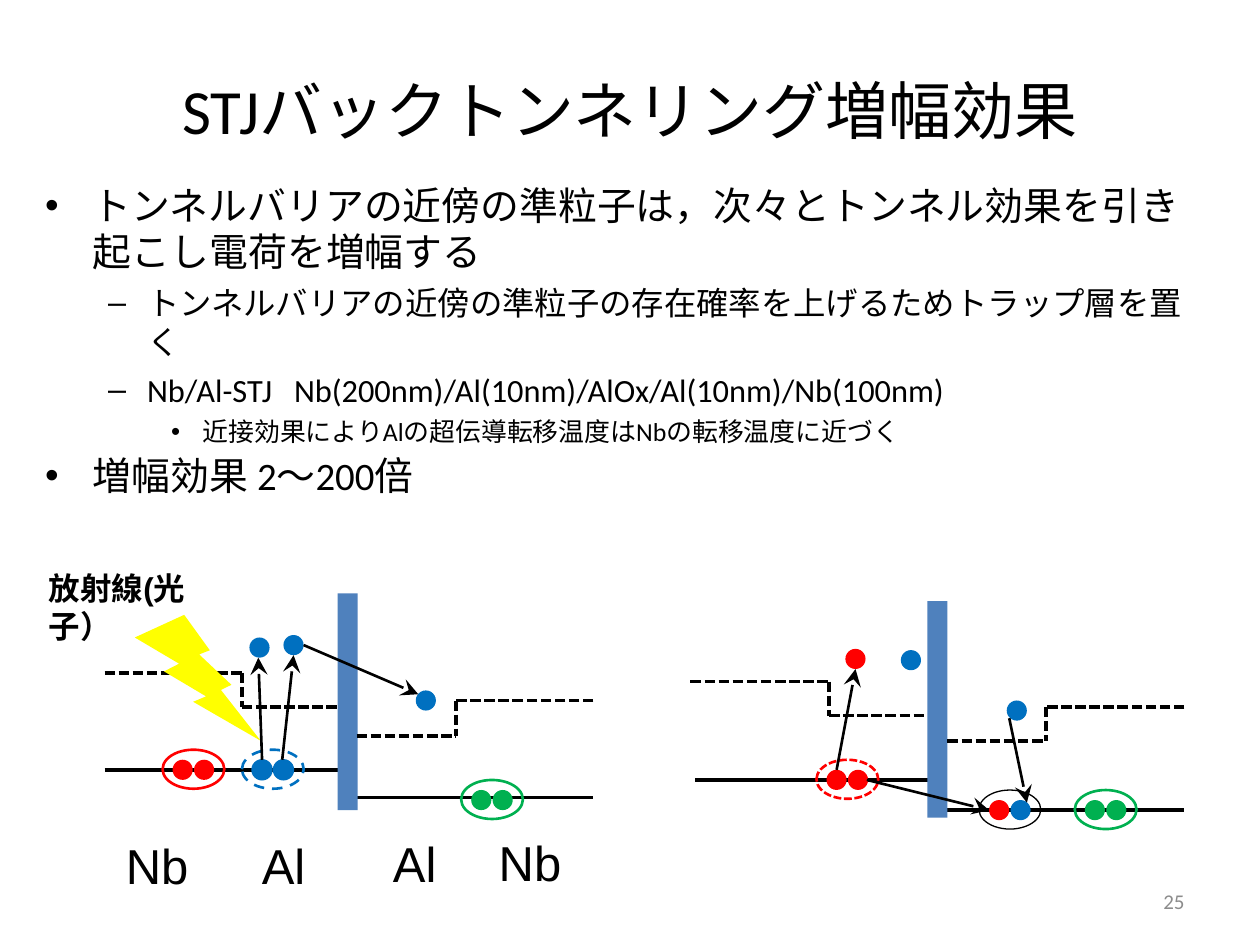
from lxml.etree import SubElement
from pptx import Presentation
from pptx.dml.color import RGBColor
from pptx.enum.dml import MSO_LINE_DASH_STYLE as Dash
from pptx.enum.shapes import MSO_CONNECTOR as Connector, MSO_SHAPE as Shape
from pptx.enum.text import MSO_ANCHOR as Anchor, PP_ALIGN as Align
from pptx.oxml.ns import qn
from pptx.util import Pt

PX = 9144  # 100 px to the inch
COLORS = {
    name: RGBColor.from_string(value)
    for name, value in {
        "black": "000000", "grey": "8C8C8C", "barrier": "4F81BD", "blue": "0070C0",
        "red": "FF0000", "green": "00B050", "yellow": "FFFF00",
    }.items()
}


def add_figure(shapes, kind, frame, fill=None, line=None, width=0.75, dash=None):
    """Add a preset shape; without a fill or line colour that part stays empty."""
    figure = shapes.add_shape(kind, *(value * PX for value in frame))
    figure.shadow.inherit = False
    if fill:
        figure.fill.solid()
        figure.fill.fore_color.rgb = COLORS[fill]
    else:
        figure.fill.background()
    if line:
        figure.line.color.rgb = COLORS[line]
        figure.line.width = Pt(width)
        if dash:
            figure.line.dash_style = dash
    else:
        figure.line.fill.background()


def add_line(shapes, start, end, width, dash=None, arrow=False):
    line = shapes.add_connector(Connector.STRAIGHT, *(value * PX for value in start + end))
    line.line.color.rgb = COLORS["black"]
    line.line.width = Pt(width)
    if dash:
        line.line.dash_style = dash
    if arrow:
        outline = line._element.spPr.find(qn("a:ln"))
        SubElement(outline, qn("a:tailEnd"), type="stealth", w="lg", len="lg")
    SubElement(line._element.spPr, qn("a:effectLst"))


deck = Presentation()
deck.slide_width, deck.slide_height = 1000 * PX, 750 * PX
page = deck.slides.add_slide(deck.slide_layouts[5])

# Title
title = page.shapes.title
title.left, title.top, title.width, title.height = (n * PX for n in (50, 50, 900, 73))
title.text_frame.vertical_anchor = Anchor.MIDDLE
para = title.text_frame.paragraphs[0]
para.alignment = Align.CENTER
span = para.add_run()
span.text = "STJバックトンネリング増幅効果"
span.font.size = Pt(36)
span.font.name = "Calibri"
span.font.color.rgb = COLORS["black"]

# Bullet levels: margin, hanging indent, mark, text size, space before
LEVELS = [(38, 38, "•", 22.2, 3), (81, 31, "–", 18.5, 5), (125, 25, "•", 14.8, 4)]
BULLETS = [
    (0, "トンネルバリアの近傍の準粒子は，次々とトンネル効果を引き起こし電荷を増幅する"),
    (1, "トンネルバリアの近傍の準粒子の存在確率を上げるためトラップ層を置く"),
    (1, "Nb/Al-STJ   Nb(200nm)/Al(10nm)/AlOx/Al(10nm)/Nb(100nm)"),
    (2, "近接効果によりAlの超伝導転移温度はNbの転移温度に近づく"),
    (0, "増幅効果 2～200倍"),
]
box = page.shapes.add_textbox(26 * PX, 139 * PX, 946 * PX, 205 * PX)
box.text_frame.word_wrap = True
for index, (level, text) in enumerate(BULLETS):
    para = box.text_frame.add_paragraph() if index else box.text_frame.paragraphs[0]
    margin, hanging, mark, size, before = LEVELS[level]
    para.level = level
    para.space_before = Pt(before)
    properties = para._p.get_or_add_pPr()
    properties.set("marL", str(margin * PX))
    properties.set("indent", str(-hanging * PX))
    SubElement(properties, qn("a:buFont"), typeface="Arial")
    SubElement(properties, qn("a:buChar"), char=mark)
    span = para.add_run()
    span.text = text
    span.font.size = Pt(size)
    span.font.name = "Calibri"
    span.font.color.rgb = COLORS["black"]

# Ground levels: left, right, height
for left, right, y in [(83, 268, 611), (283, 471, 633), (552, 737, 619), (752, 940, 643)]:
    add_line(page.shapes, (left, y), (right, y), 2)

# Tunnel barriers
for left, top in [(268, 471), (736, 477)]:
    add_figure(page.shapes, Shape.RECTANGLE, (left, top, 16, 172), "barrier")

# Gap edges: outer end, step, barrier side, upper and lower height
GAP_EDGES = [
    (83, 192, 268, 534, 561), (471, 362, 283, 556, 584),
    (548, 658, 736, 541, 568), (940, 830, 752, 561, 588),
]
for outer, step, inner, upper, lower in GAP_EDGES:
    edge = page.shapes.add_group_shape().shapes
    add_line(edge, (outer, upper), (step, upper), 2, Dash.SQUARE_DOT)
    add_line(edge, (step, upper), (step, lower), 2, Dash.SQUARE_DOT)
    left, right = sorted((step, inner))
    add_line(edge, (left, lower), (right, lower), 2, Dash.SQUARE_DOT)

add_figure(page.shapes, Shape.LIGHTNING_BOLT, (107, 488, 100, 100), "yellow")

# Cooper pairs: left, top, two ball colours, ball outline, ring colour, ring width, ring dash
PAIRS = [
    (129, 595, "red", "red", None, "red", 1.5, None),
    (192, 595, "blue", "blue", "blue", "blue", 1.5, Dash.DASH),
    (366, 619, "green", "green", None, "green", 1.5, None),
    (648, 603, "red", "red", None, "red", 1.5, Dash.SQUARE_DOT),
    (777, 627, "red", "blue", None, "black", 0.75, None),
    (853, 627, "green", "green", None, "green", 1.5, None),
]
for left, top, first, second, outline, ring, width, dash in PAIRS:
    pair = page.shapes.add_group_shape().shapes
    for offset, color in [(8, first), (25, second)]:
        add_figure(pair, Shape.OVAL, (left + offset, top + 8, 16, 16), color, outline)
    add_figure(pair, Shape.OVAL, (left, top, 49, 31), None, ring, width, dash)

# Free quasiparticles
PARTICLES = [
    (198, 506, "blue"), (225, 504, "blue"), (330, 548, "blue"),
    (671, 515, "red"), (715, 516, "blue"), (799, 556, "blue"),
]
for left, top, color in PARTICLES:
    add_figure(page.shapes, Shape.OVAL, (left, top, 16, 16), color)

# Particle moves
MOVES = [
    ((208, 603), (205, 522)), ((224, 603), (233, 520)), ((241, 512), (332, 551)),
    ((664, 611), (679, 531)), ((801, 570), (815, 637)), ((688, 619), (785, 643)),
]
for start, end in MOVES:
    add_line(page.shapes, start, end, 1.5, arrow=True)

# Labels: frame, text, size, bold, wrap
LABELS = [
    ((29, 447, 169, 40), "放射線(光子）", 18, True, True),
    ((90, 658, 71, 57), "Nb", 28, False, False),
    ((198, 658, 55, 57), "Al", 28, False, False),
    ((302, 657, 55, 57), "Al", 28, False, False),
    ((386, 656, 71, 57), "Nb", 28, False, False),
]
for frame, text, size, bold, wrap in LABELS:
    box = page.shapes.add_textbox(*(value * PX for value in frame))
    box.text_frame.word_wrap = wrap
    span = box.text_frame.paragraphs[0].add_run()
    span.text = text
    span.font.size = Pt(size)
    span.font.name = "Arial"
    span.font.bold = bold
    span.font.color.rgb = COLORS["black"]

# Page number
box = page.shapes.add_textbox(717 * PX, 695 * PX, 233 * PX, 40 * PX)
box.text_frame.word_wrap = True
box.text_frame.vertical_anchor = Anchor.MIDDLE
para = box.text_frame.paragraphs[0]
para.alignment = Align.RIGHT
span = para.add_run()
span.text = "25"
span.font.size = Pt(12)
span.font.name = "Calibri"
span.font.color.rgb = COLORS["grey"]

deck.save("out.pptx")
